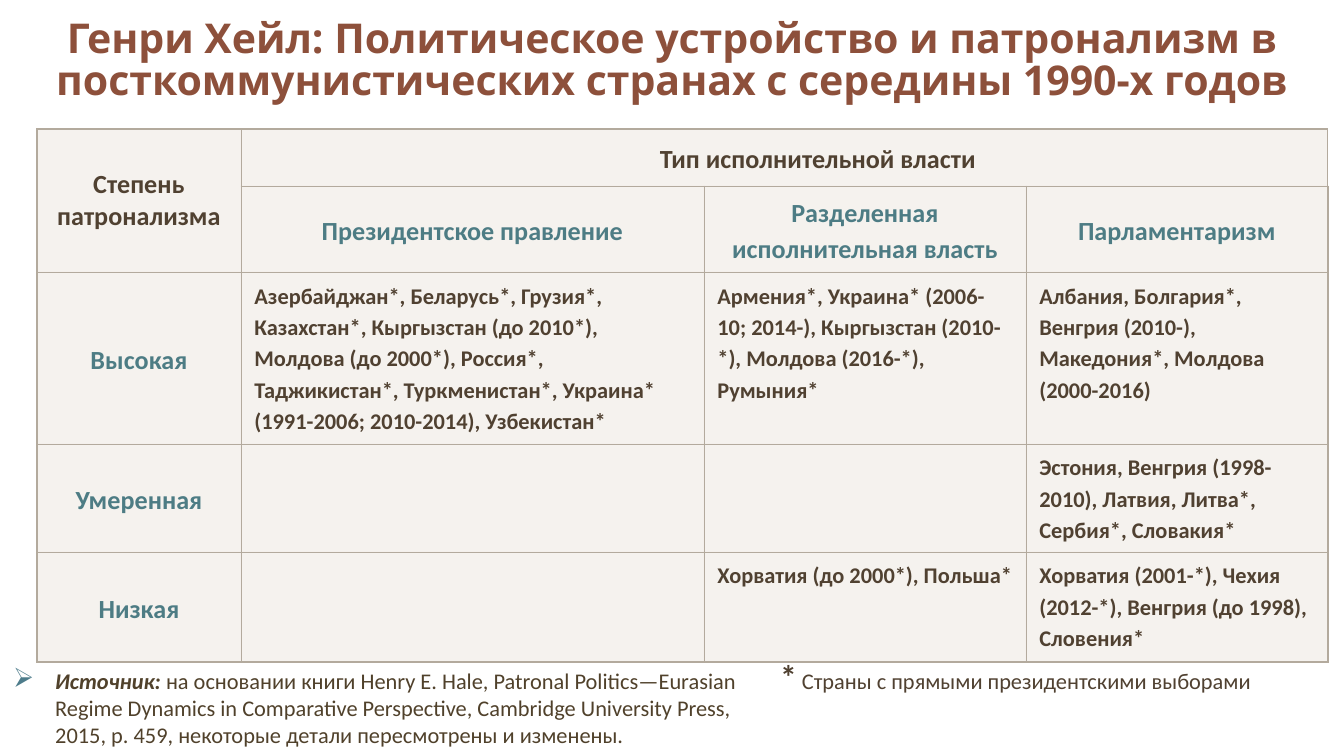
from lxml.etree import SubElement
from pptx import Presentation
from pptx.dml.color import RGBColor
from pptx.enum.text import MSO_ANCHOR, PP_ALIGN
from pptx.oxml.ns import qn
from pptx.util import Pt

PIXEL = 914400 / 134.4
TITLE_COLOR = RGBColor(0x8D, 0x50, 0x3B)
BROWN = RGBColor(0x50, 0x41, 0x31)
SOURCE_BROWN = RGBColor(0x50, 0x41, 0x2B)
TEAL = RGBColor(0x4D, 0x7C, 0x84)
BULLET_TEAL = RGBColor(0x4D, 0x7C, 0x8B)
CELL_FILL = RGBColor(0xEF, 0xEA, 0xE4)
BORDER = RGBColor(0xB3, 0xAA, 0x9D)

COLUMN_WIDTHS = [204, 463, 322, 302]
ROW_HEIGHTS = [57, 86, 172, 108, 110]
ROWS = [
    ["Степень патронализма", "Тип исполнительной власти", "", ""],
    ["", "Президентское правление", "Разделенная исполнительная власть", "Парламентаризм"],
    [
        "Высокая",
        "Азербайджан*, Беларусь*, Грузия*, Казахстан*, Кыргызстан (до 2010*), "
        "Молдова (до 2000*), Россия*, Таджикистан*, Туркменистан*, Украина* "
        "(1991-2006; 2010-2014), Узбекистан*",
        "Армения*, Украина* (2006-10; 2014-), Кыргызстан (2010-*), "
        "Молдова (2016-*), Румыния*",
        "Албания, Болгария*, Венгрия (2010-), Македония*, Молдова (2000-2016)",
    ],
    ["Умеренная", "", "", "Эстония, Венгрия (1998-2010), Латвия, Литва*, Сербия*, Словакия*"],
    [
        "Низкая",
        "",
        "Хорватия (до 2000*), Польша*",
        "Хорватия (2001-*), Чехия (2012-*), Венгрия (до 1998), Словения*",
    ],
]


def px(length):
    return round(length * PIXEL)


def add_run(paragraph, text, size, color, bold=False, italic=False, font_name="Calibri"):
    run = paragraph.add_run()
    run.text = text
    run.font.name = font_name
    run.font.size = Pt(size)
    run.font.color.rgb = color
    run.font.bold = bold
    run.font.italic = italic


def add_text_box(slide, left, top, width, height, anchor=MSO_ANCHOR.TOP):
    shape = slide.shapes.add_textbox(px(left), px(top), px(width), px(height))
    shape.text_frame.word_wrap = True
    shape.text_frame.vertical_anchor = anchor
    return shape.text_frame.paragraphs[0]


def add_bullet(paragraph, symbol, color, percent, indent):
    properties = paragraph._p.get_or_add_pPr()
    properties.set("marL", str(px(indent)))
    properties.set("indent", str(-px(indent)))
    bullet_color = SubElement(properties, qn("a:buClr"))
    SubElement(bullet_color, qn("a:srgbClr"), val=str(color))
    SubElement(properties, qn("a:buSzPct"), val=str(percent * 1000))
    SubElement(properties, qn("a:buChar"), char=symbol)


def style_cell(cell, row, column):
    cell.fill.solid()
    cell.fill.fore_color.rgb = CELL_FILL
    properties = cell._tc.get_or_add_tcPr()
    color = properties.find(".//" + qn("a:srgbClr"))
    SubElement(color, qn("a:alpha"), val="60000")
    outer_edges = {
        "a:lnL": column == 0,
        "a:lnR": column == len(COLUMN_WIDTHS) - 1,
        "a:lnT": row == 0,
        "a:lnB": row == len(ROW_HEIGHTS) - 1,
    }
    for position, (tag, is_outer) in enumerate(outer_edges.items()):
        line = SubElement(properties, qn(tag), w=str(Pt(1 if is_outer else 0.5)))
        fill = SubElement(line, qn("a:solidFill"))
        SubElement(fill, qn("a:srgbClr"), val=str(BORDER))
        properties.insert(position, line)


def write_cell(cell, text, row, column):
    is_heading = row < 2 or column == 0
    paragraph = cell.text_frame.paragraphs[0]
    if is_heading:
        cell.vertical_anchor = MSO_ANCHOR.MIDDLE
        paragraph.alignment = PP_ALIGN.CENTER
    elif (row, column) == (4, 2):
        paragraph.alignment = PP_ALIGN.JUSTIFY
    if (row, column) != (0, 0):
        paragraph.line_spacing = 1.15
    if (row, column) == (0, 1):
        paragraph._p.get_or_add_pPr().set("marL", str(px(67)))
    color = TEAL if is_heading and row > 0 else BROWN
    add_run(paragraph, text, 14 if is_heading else 12, color, bold=True)


def add_regime_table(slide):
    frame = slide.shapes.add_table(
        len(ROW_HEIGHTS), len(COLUMN_WIDTHS), px(37), px(129),
        px(sum(COLUMN_WIDTHS)), px(sum(ROW_HEIGHTS)),
    )
    table = frame.table
    table.first_row = False
    table.horz_banding = False
    for column, width in zip(table.columns, COLUMN_WIDTHS):
        column.width = px(width)
    for row, height in zip(table.rows, ROW_HEIGHTS):
        row.height = px(height)
    table.cell(0, 0).merge(table.cell(1, 0))
    table.cell(0, 1).merge(table.cell(0, 3))
    for row, texts in enumerate(ROWS):
        for column, text in enumerate(texts):
            cell = table.cell(row, column)
            style_cell(cell, row, column)
            if text:
                write_cell(cell, text, row, column)


def add_title(slide):
    paragraph = add_text_box(slide, 16, -5, 1312, 134, MSO_ANCHOR.MIDDLE)
    paragraph.alignment = PP_ALIGN.CENTER
    paragraph.line_spacing = 0.86
    add_run(
        paragraph,
        "Генри Хейл: Политическое устройство и патронализм в "
        "посткоммунистических странах с середины 1990-х годов",
        22, TITLE_COLOR, bold=True, font_name="Open Sans",
    )


def add_footnote(slide):
    paragraph = add_text_box(slide, 767, 649, 519, 54, MSO_ANCHOR.MIDDLE)
    paragraph.alignment = PP_ALIGN.JUSTIFY
    add_run(paragraph, "*", 18, BROWN, bold=True)
    add_run(paragraph, " Страны с прямыми президентскими выборами", 12, BROWN)


def add_source(slide):
    paragraph = add_text_box(slide, 0, 661, 767, 95)
    add_bullet(paragraph, "➢", BULLET_TEAL, 120, 42)
    add_run(paragraph, "Источник: ", 12, SOURCE_BROWN, bold=True, italic=True)
    add_run(
        paragraph,
        "на основании книги Henry E. Hale, Patronal Politics—Eurasian Regime "
        "Dynamics in Comparative Perspective, Cambridge University Press, 2015, "
        "p. 459, некоторые детали пересмотрены и изменены.",
        12, SOURCE_BROWN,
    )


def main():
    presentation = Presentation()
    presentation.slide_width = px(1344)
    presentation.slide_height = px(756)
    slide = presentation.slides.add_slide(presentation.slide_layouts[6])
    add_title(slide)
    add_regime_table(slide)
    add_footnote(slide)
    add_source(slide)
    presentation.save("out.pptx")


if __name__ == "__main__":
    main()
